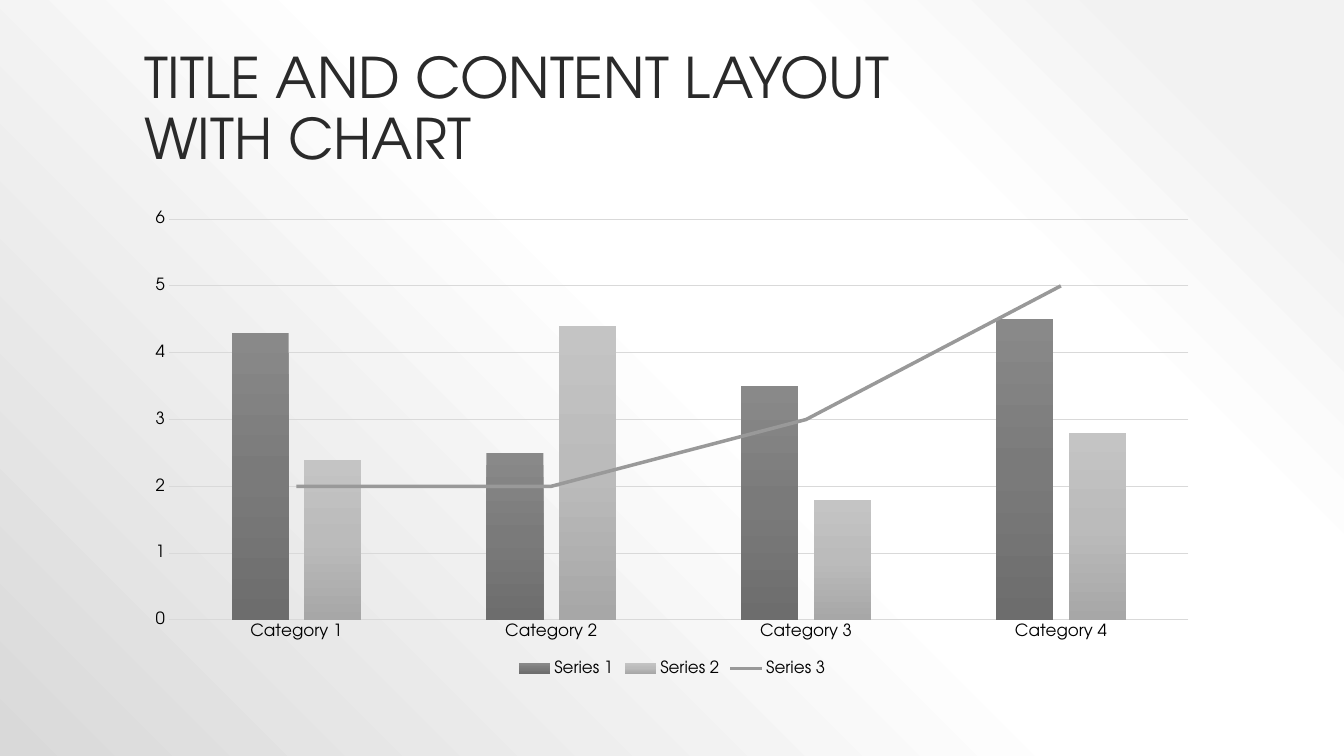
from copy import deepcopy

from lxml import etree
from pptx import Presentation
from pptx.chart.data import CategoryChartData
from pptx.dml.color import RGBColor
from pptx.enum.chart import XL_CHART_TYPE, XL_LEGEND_POSITION, XL_MARKER_STYLE, XL_TICK_MARK
from pptx.enum.text import MSO_ANCHOR, PP_ALIGN
from pptx.oxml import parse_xml
from pptx.oxml.ns import nsdecls, qn
from pptx.util import Inches, Pt

COLUMNS = XL_CHART_TYPE.COLUMN_CLUSTERED
BOTTOM_LEGEND = XL_LEGEND_POSITION.BOTTOM
NO_MARKER = XL_MARKER_STYLE.NONE
NO_TICK = XL_TICK_MARK.NONE
ANCHOR_BOTTOM = MSO_ANCHOR.BOTTOM
LEFT = PP_ALIGN.LEFT

TITLE_ONLY = 5
DOWNWARD = '<a:lin ang="5400000" scaled="0"/>'
FROM_TOP_RIGHT = '<a:path path="circle"><a:fillToRect l="100000" b="100000"/></a:path>'

CATEGORIES = ["Category 1", "Category 2", "Category 3", "Category 4"]
SERIES = {
    "Series 1": [4.3, 2.5, 3.5, 4.5],
    "Series 2": [2.4, 4.4, 1.8, 2.8],
    "Series 3": [2, 2, 3, 5],
}
COLUMN_GRADIENTS = [
    [(0, "898989"), (50, "7A7A7A"), (100, "6D6D6D")],
    [(0, "C4C4C4"), (50, "BBBBBB"), (100, "A7A7A7")],
]
BACKDROP = [(10, "F2F2F2"), (28, "FFFFFF"), (48, "FFFFFF"), (100, "D9D9D9")]


def color(value):
    return RGBColor.from_string(value)


class SlideBuilder:
    typeface = "TeX Gyre Adventor"
    title_color = "2A2A2A"
    label_color = "000000"
    base_color = "545454"
    rule_color = "D9D9D9"
    trend_color = "999999"

    def __init__(self, slide):
        self.slide = slide

    def style_font(self, font, size, hex_color):
        font.name = self.typeface
        font.size = Pt(size)
        font.color.rgb = color(hex_color)

    def style_line(self, line, hex_color, width):
        line.color.rgb = color(hex_color)
        line.width = Pt(width)

    def gradient(self, fill, owner, stops, direction):
        fill.gradient()
        default_gradient = next(owner.iter(qn("a:gradFill")))
        stop_xml = "".join(
            f'<a:gs pos="{position * 1000}"><a:srgbClr val="{value}"/></a:gs>'
            for position, value in stops
        )
        gradient_fill = parse_xml(
            f'<a:gradFill {nsdecls("a")} rotWithShape="1">'
            f"<a:gsLst>{stop_xml}</a:gsLst>{direction}</a:gradFill>"
        )
        default_gradient.getparent().replace(default_gradient, gradient_fill)

    def background(self, stops):
        self.gradient(self.slide.background.fill, self.slide.element, stops, FROM_TOP_RIGHT)

    def title(self, text, left, top, width, height):
        heading = self.slide.shapes.title
        heading.left, heading.top = Inches(left), Inches(top)
        heading.width, heading.height = Inches(width), Inches(height)
        frame = heading.text_frame
        frame.text = text
        frame.word_wrap = True
        frame.vertical_anchor = ANCHOR_BOTTOM
        paragraph = frame.paragraphs[0]
        paragraph.alignment = LEFT
        paragraph.line_spacing = 0.9
        self.style_font(paragraph.font, 40, self.title_color)

    def axis(self, axis):
        axis.major_tick_mark = NO_TICK
        axis.minor_tick_mark = NO_TICK
        self.style_font(axis.tick_labels.font, 12, self.label_color)

    def last_series_as_line(self, chart):
        column_chart = next(chart.element.iter(qn("c:barChart")))
        series_xml = column_chart.findall(qn("c:ser"))[-1]
        for column_setting in series_xml.findall(qn("c:invertIfNegative")):
            series_xml.remove(column_setting)
        line_chart = parse_xml(
            f'<c:lineChart {nsdecls("c")}><c:grouping val="standard"/>'
            '<c:varyColors val="0"/></c:lineChart>'
        )
        line_chart.append(series_xml)
        etree.SubElement(line_chart, qn("c:marker")).set("val", "1")
        for axis_id in column_chart.findall(qn("c:axId")):
            line_chart.append(deepcopy(axis_id))
        column_chart.addnext(line_chart)
        trend = chart.plots[1].series[0]
        trend.smooth = False
        trend.marker.style = NO_MARKER
        self.style_line(trend.format.line, self.trend_color, 2.5)

    def combined_chart(self, left, top, width, height):
        data = CategoryChartData()
        data.categories = CATEGORIES
        for name, values in SERIES.items():
            data.add_series(name, values)
        chart = self.slide.shapes.add_chart(
            COLUMNS, Inches(left), Inches(top), Inches(width), Inches(height), data
        ).chart
        chart.has_title = False
        self.style_font(chart.font, 10, self.base_color)

        columns = chart.plots[0]
        columns.vary_by_categories = False
        columns.gap_width = 219
        columns.overlap = -27
        for series, stops in zip(columns.series, COLUMN_GRADIENTS):
            self.gradient(series.format.fill, series._element, stops, DOWNWARD)
        self.last_series_as_line(chart)

        self.axis(chart.category_axis)
        self.style_line(chart.category_axis.format.line, self.rule_color, 0.75)
        scale = chart.value_axis
        self.axis(scale)
        scale.minimum_scale, scale.maximum_scale, scale.major_unit = 0, 6, 1
        scale.format.line.fill.background()
        self.style_line(scale.major_gridlines.format.line, self.rule_color, 0.75)

        chart.has_legend = True
        chart.legend.position = BOTTOM_LEGEND
        chart.legend.include_in_layout = False
        self.style_font(chart.legend.font, 12, self.label_color)


def main():
    presentation = Presentation()
    presentation.slide_width = Inches(13.33)
    presentation.slide_height = Inches(7.5)
    layout = presentation.slide_layouts[TITLE_ONLY]
    builder = SlideBuilder(presentation.slides.add_slide(layout))
    builder.background(BACKDROP)
    builder.title("TITLE AND CONTENT LAYOUT \vWITH CHART", 1.33, 0.3, 10.67, 1.45)
    builder.combined_chart(1.33, 2, 10.67, 4.75)
    presentation.save("out.pptx")


if __name__ == "__main__":
    main()
